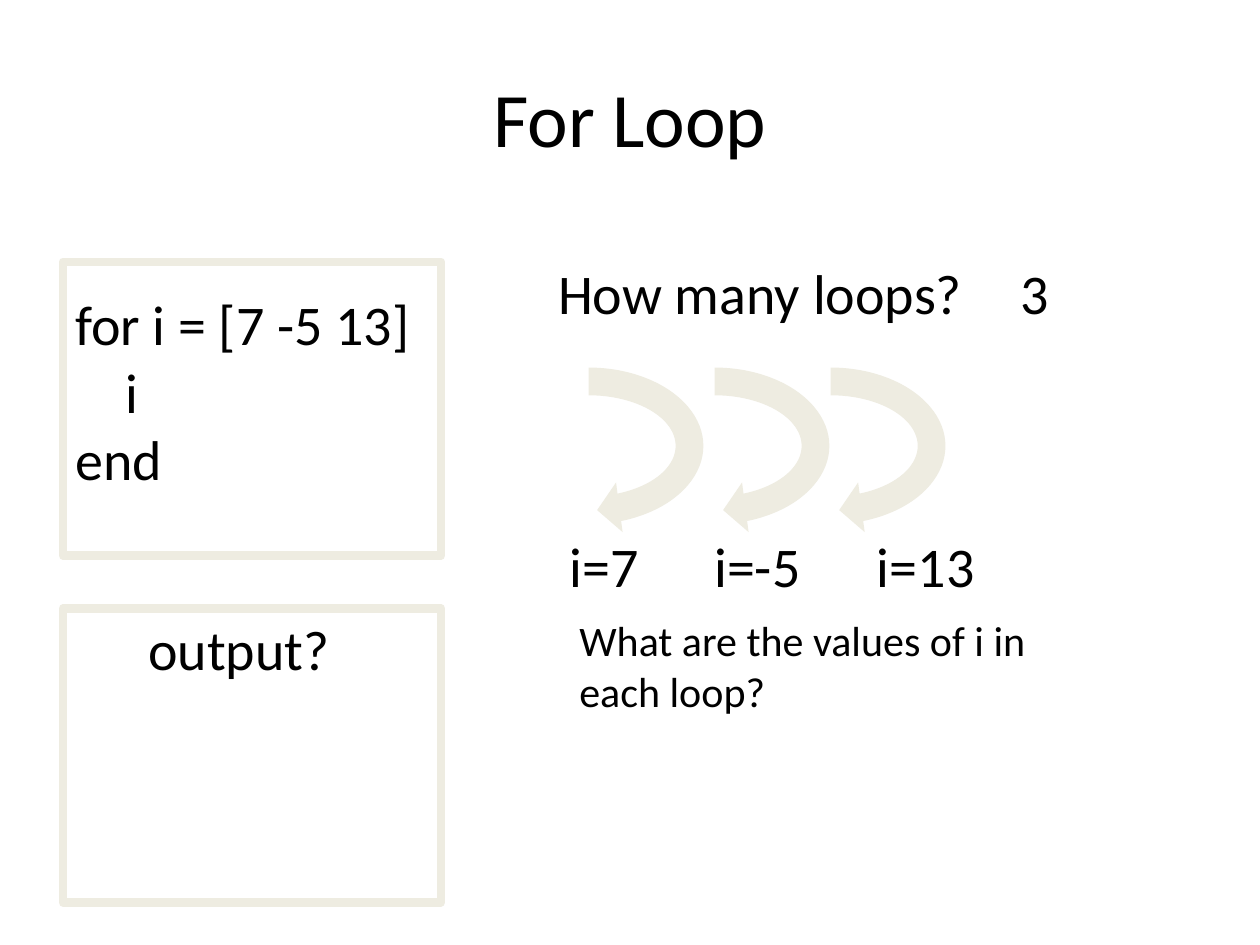
"""Build the For Loop exercise slide."""
from lxml.etree import SubElement
from pptx import Presentation
from pptx.dml.color import RGBColor
from pptx.enum.shapes import MSO_SHAPE as Shape
from pptx.enum.text import MSO_ANCHOR as Anchor, PP_ALIGN as Align
from pptx.oxml.ns import qn
from pptx.util import Cm, Pt

INK = RGBColor(0x00, 0x00, 0x00)
CREAM = RGBColor(0xEE, 0xEC, 0xE1)
FONT = "Calibri"

TITLE = ("For Loop", (1.27, 0.76, 22.86, 3.18))
CODE = (["for i = [7 -5 13]", "i", "end"], (1.27, 5.72, 7.82, 4.37))
CODE_INDENT = 1.02
QUESTION = ("How many loops?", (11, 5.08, 9.09, 1.63))
ANSWER = ("3", (20.32, 5.08, 1.9, 1.63))
LOOP_VALUES = (["i=7", "i=-5", "i=13"], (11.23, 10.59, 9.09, 1.63))
VALUE_TABS = (2.92, 6.2)
OUTPUT = ("output?", (2.74, 12.27, 9.09, 1.63))
FOLLOW_UP = ("What are the values of i in each loop?", (11.43, 12.27, 10.36, 2.31))

LOOP_LEFTS = (10.06, 12.6, 14.94)
LOOP_TOP, LOOP_WIDTH, LOOP_HEIGHT = 6.45, 3.61, 5.08
LOOP_ADJUSTMENTS = (0.155, 11.42, 200.05, 108, 0.14)
PANEL_TOPS = (5.28, 12.27)
PANEL_LEFT, PANEL_WIDTH, PANEL_HEIGHT = 1.27, 7.62, 5.92


def add_text(slide, lines, place, size=32, align=Align.LEFT, anchor=Anchor.TOP):
    frame = slide.shapes.add_textbox(*map(Cm, place)).text_frame
    frame.word_wrap = True
    frame.vertical_anchor = anchor
    frame.text = "\n".join(lines)
    for paragraph in frame.paragraphs:
        paragraph.alignment = align
        paragraph.font.name = FONT
        paragraph.font.size = Pt(size)
        paragraph.font.color.rgb = INK
    return frame.paragraphs


def add_plain_shape(slide, kind, *place):
    shape = slide.shapes.add_shape(kind, *map(Cm, place))
    shape.shadow.inherit = False
    return shape


def add_loop(slide, left):
    loop = add_plain_shape(slide, Shape.CIRCULAR_ARROW, left, LOOP_TOP, LOOP_WIDTH, LOOP_HEIGHT)
    for index, value in enumerate(LOOP_ADJUSTMENTS):
        loop.adjustments[index] = value
    loop.rotation = 90
    loop.fill.solid()
    loop.fill.fore_color.rgb = CREAM
    loop.line.fill.background()


def add_panel(slide, top):
    panel = add_plain_shape(slide, Shape.RECTANGLE, PANEL_LEFT, top, PANEL_WIDTH, PANEL_HEIGHT)
    panel.fill.background()
    panel.line.color.rgb = CREAM
    panel.line.width = Pt(5)


def set_tabs(paragraph, positions):
    properties = paragraph._p.get_or_add_pPr()
    tabs = SubElement(properties, qn("a:tabLst"))
    properties.insert(0, tabs)
    for position in positions:
        SubElement(tabs, qn("a:tab"), pos=str(Cm(position)), algn="l")


def main():
    deck = Presentation()
    deck.slide_width, deck.slide_height = Cm(25.4), Cm(19.05)
    slide = deck.slides.add_slide(deck.slide_layouts[6])

    title, title_place = TITLE
    add_text(slide, [title], title_place, 44, Align.CENTER, Anchor.MIDDLE)
    code_body = add_text(slide, *CODE)[1]
    code_body._p.get_or_add_pPr().set("marL", str(Cm(CODE_INDENT)))
    for label, place in (QUESTION, ANSWER):
        add_text(slide, [label], place)
    for left in LOOP_LEFTS:
        add_loop(slide, left)
    values, values_place = LOOP_VALUES
    set_tabs(add_text(slide, ["\t".join(values)], values_place)[0], VALUE_TABS)
    output, output_place = OUTPUT
    add_text(slide, [output], output_place)
    for top in PANEL_TOPS:
        add_panel(slide, top)
    follow_up, follow_up_place = FOLLOW_UP
    add_text(slide, [follow_up], follow_up_place, 24)
    deck.save("out.pptx")


if __name__ == "__main__":
    main()
